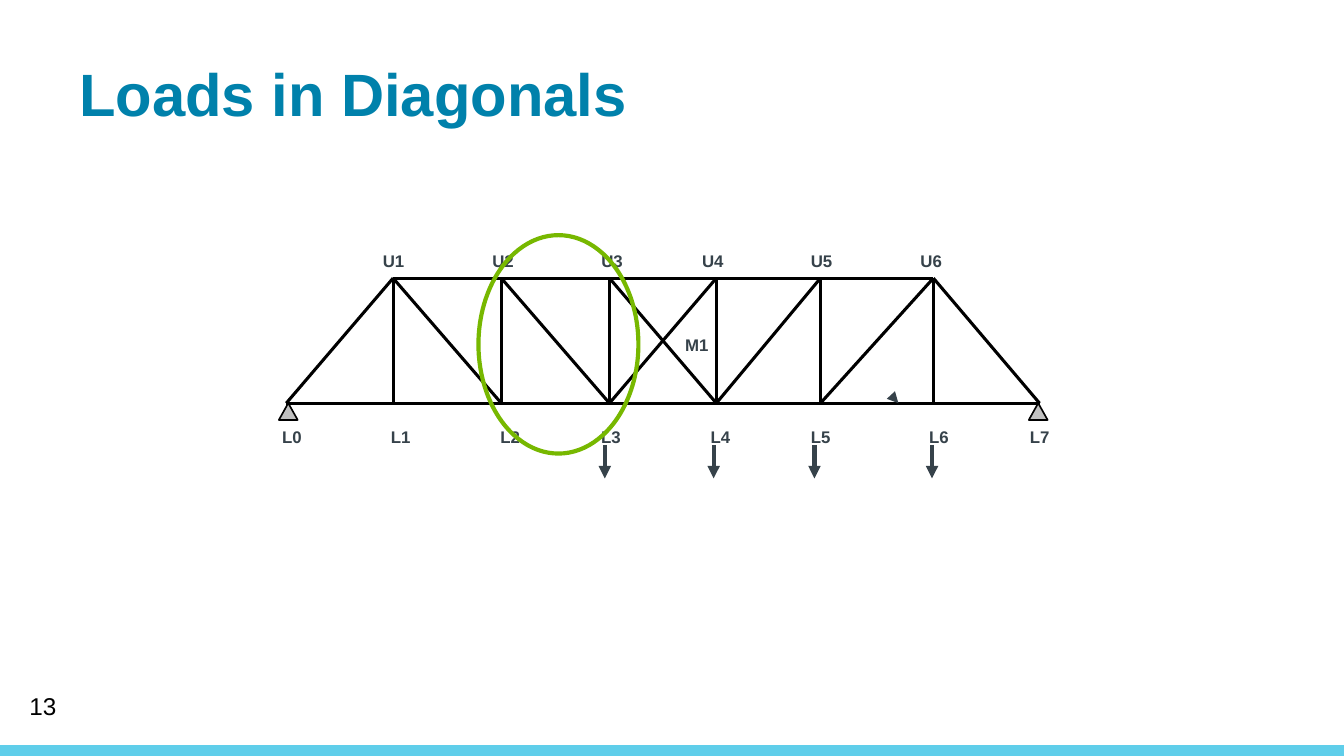
from dataclasses import dataclass

from lxml.etree import SubElement
from pptx import Presentation
from pptx.dml.color import RGBColor
from pptx.enum.shapes import MSO_CONNECTOR as Connector, MSO_SHAPE as Preset
from pptx.enum.text import MSO_ANCHOR as Anchor, MSO_AUTO_SIZE as AutoSize
from pptx.oxml.ns import qn
from pptx.util import Pt

EMU_PER_PX = 4572  # 200 px to the inch
WIDTH, HEIGHT = 2000, 1125
COLORS = {
    "title": "0081AB",
    "label": "36424A",
    "member": "000000",
    "support": "C0C0C0",
    "highlight": "77B800",
    "footer": "5FCEEA",
}
TOP, BOTTOM = 414, 600
PANEL_X = [426, 585, 746, 907, 1066, 1221, 1389, 1547]


@dataclass(frozen=True)
class Label:
    text: str
    left: int
    top: int
    width: int
    height: int = 50
    size: int = 9
    color: str = "label"
    bold: bool = True


@dataclass(frozen=True)
class Line:
    x1: int
    y1: int
    x2: int
    y2: int
    weight: float = 1.63
    color: str = "member"
    arrow: bool = False


def px(length: int) -> int:
    return length * EMU_PER_PX


def rgb(name: str) -> RGBColor:
    return RGBColor.from_string(COLORS[name])


def set_all(target, values: dict) -> None:
    for name, value in values.items():
        setattr(target, name, value)


def draw_label(shapes, label: Label, **frame_format) -> None:
    box = shapes.add_textbox(px(label.left), px(label.top), px(label.width), px(label.height))
    frame = box.text_frame
    set_all(frame, {"word_wrap": True, **frame_format})
    frame.text = label.text
    font = frame.paragraphs[0].runs[0].font
    set_all(font, {"name": "Arial", "size": Pt(label.size), "bold": label.bold})
    font.color.rgb = rgb(label.color)


def draw_line(shapes, line: Line) -> None:
    connector = shapes.add_connector(
        Connector.STRAIGHT, px(line.x1), px(line.y1), px(line.x2), px(line.y2))
    connector.line.width = Pt(line.weight)
    connector.line.color.rgb = rgb(line.color)
    if line.arrow:
        SubElement(connector.line._get_or_add_ln(), qn("a:tailEnd"), type="triangle")
    SubElement(connector._element.spPr, qn("a:effectLst"))


def draw_support(shapes, apex_x: int) -> None:
    base_y = BOTTOM + 25
    builder = shapes.build_freeform(px(apex_x - 14), px(base_y))
    builder.add_line_segments([(px(apex_x + 14), px(base_y)), (px(apex_x), px(BOTTOM))])
    support = builder.convert_to_shape()
    support.shadow.inherit = False
    support.fill.solid()
    support.fill.fore_color.rgb = rgb("support")
    support.line.width = Pt(0.88)
    support.line.color.rgb = rgb("member")


def main() -> None:
    deck = Presentation()
    set_all(deck, {"slide_width": px(WIDTH), "slide_height": px(HEIGHT)})
    shapes = deck.slides.add_slide(deck.slide_layouts[6]).shapes

    # Footer band and title
    band = shapes.add_shape(Preset.RECTANGLE, 0, px(HEIGHT - 16), px(WIDTH), px(16))
    band.shadow.inherit = False
    band.fill.solid()
    band.fill.fore_color.rgb = rgb("footer")
    band.line.fill.background()
    draw_label(shapes, Label("Loads in Diagonals", 118, 75, 1798, 114, 32, "title"),
               margin_left=0)

    # Truss chords and verticals
    draw_line(shapes, Line(PANEL_X[1], TOP, PANEL_X[6], TOP))
    draw_line(shapes, Line(PANEL_X[0], BOTTOM, PANEL_X[7], BOTTOM))
    for x in PANEL_X[1:7]:
        draw_line(shapes, Line(x, TOP, x, BOTTOM))

    # Diagonals, by the panel they cross; the middle panel has both
    for panel in (0, 3, 4, 5):
        draw_line(shapes, Line(PANEL_X[panel], BOTTOM, PANEL_X[panel + 1], TOP))
    for panel in (1, 2, 3, 6):
        draw_line(shapes, Line(PANEL_X[panel], TOP, PANEL_X[panel + 1], BOTTOM))

    # Supports
    for apex_x in (429, 1545):
        draw_support(shapes, apex_x)

    # Joint labels: left edge and width of each
    lower = [(400, 76), (562, 92), (725, 102), (875, 80),
             (1038, 88), (1187, 118), (1363, 86), (1513, 86)]
    upper = [(550, 110), (713, 94), (875, 104), (1025, 104), (1187, 92), (1350, 98)]
    joints = [Label(f"L{n}", left, 625, width) for n, (left, width) in enumerate(lower)]
    joints += [Label(f"U{n}", left, 363, width) for n, (left, width) in enumerate(upper, 1)]
    joints.append(Label("M1", 1000, 488, 112))
    for joint in joints:
        draw_label(shapes, joint, auto_size=AutoSize.SHAPE_TO_FIT_TEXT)

    # Highlighted panel
    highlight = shapes.add_shape(Preset.OVAL, px(712), px(350), px(238), px(325))
    highlight.shadow.inherit = False
    highlight.fill.background()
    highlight.line.width = Pt(2.25)
    highlight.line.color.rgb = rgb("highlight")

    # Load arrows
    draw_line(shapes, Line(1336, 599, 1337, 600, 0.75, "label", True))
    for x in (900, 1062, 1212, 1387):
        draw_line(shapes, Line(x, 662, x, 712, 2.25, "label", True))

    # Slide number
    draw_label(shapes, Label("13", 24, 1020, 450, 60, 13, "member", False),
               vertical_anchor=Anchor.MIDDLE)

    deck.save("out.pptx")


if __name__ == "__main__":
    main()
